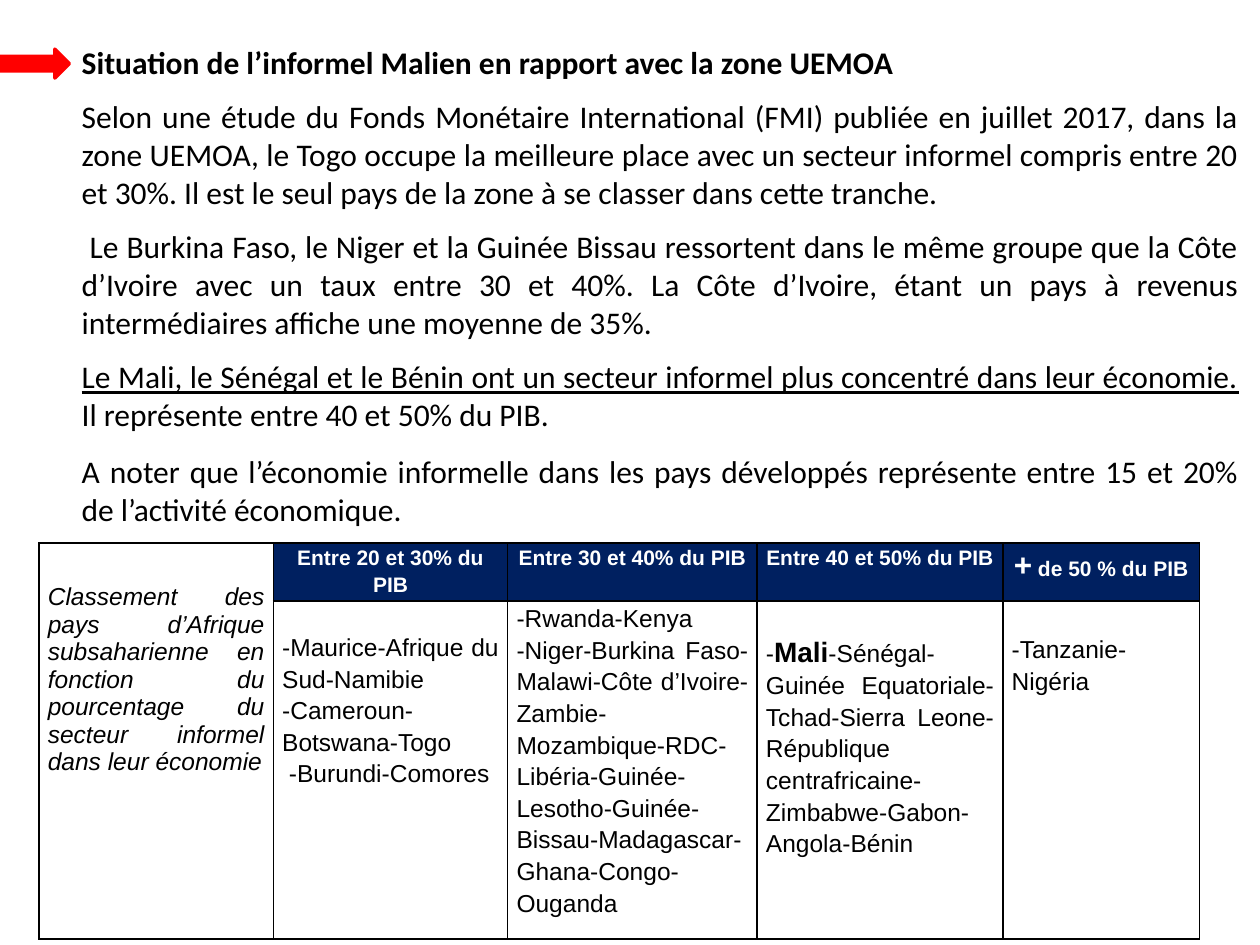
import pptx
import pptx.util
import pptx.dml.color
import pptx.enum.shapes
import pptx.enum.text
import pptx.oxml
import pptx.oxml.ns

Inches, Pt = pptx.util.Inches, pptx.util.Pt
ALIGN = pptx.enum.text.PP_ALIGN
COLORS = {"text": "000000", "header": "002060", "header_text": "FFFFFF", "arrow": "FF0000"}

# Content: (runs, space after in points); a run is (text, format)
PARAGRAPHS = [
    ([("Situation de l’informel Malien en rapport avec la zone UEMOA", {"bold": True})], 9.5),
    ([("Selon une étude du Fonds Monétaire International (FMI) publiée en juillet 2017, "
       "dans la zone UEMOA, le Togo occupe la meilleure place avec un secteur informel "
       "compris entre 20 et 30%. Il est le seul pays de la zone à se classer dans cette "
       "tranche.", {})], 9.5),
    ([(" Le Burkina Faso, le Niger et la Guinée Bissau ressortent dans le même groupe que "
       "la Côte d’Ivoire avec un taux entre 30 et 40%. La Côte d’Ivoire, étant un pays à "
       "revenus intermédiaires affiche une moyenne de 35%.", {})], 9.5),
    ([("Le Mali, le Sénégal et le Bénin ont un secteur informel plus concentré dans leur "
       "économie.", {"underline": True}),
      (" Il représente entre 40 et 50% du PIB.", {})], 11),
    ([("A noter que l’économie informelle dans les pays développés représente entre 15 et "
       "20% de l’activité économique.", {})], 0),
]
ROW_TITLE = ("Classement des pays d’Afrique subsaharienne en fonction du pourcentage du "
             "secteur informel dans leur économie")
# One entry per bracket: header runs, country runs, top margin of the country cell
BRACKETS = [
    ([("Entre 20 et 30% du PIB", {})],
     [("-Maurice-Afrique du Sud-Namibie\v-Cameroun-Botswana-Togo\v -Burundi-Comores", {})], 0.23),
    ([("Entre 30 et 40% du PIB", {})],
     [("-Rwanda-Kenya\v-Niger-Burkina Faso-Malawi-Côte d’Ivoire-Zambie-Mozambique-RDC-"
       "Libéria-Guinée-Lesotho-Guinée-Bissau-Madagascar-Ghana-Congo-Ouganda", {})], 0),
    ([("Entre 40 et 50% du PIB", {})],
     [("-", {}), ("Mali", {"size": 16, "bold": True}),
      ("-Sénégal-Guinée Equatoriale-Tchad-Sierra Leone-République centrafricaine-"
       "Zimbabwe-Gabon-Angola-Bénin", {})], 0.25),
    ([("+", {"size": 18}), (" de 50 % du PIB", {})],
     [("-Tanzanie-Nigéria", {})], 0.25),
]
COL_WIDTHS = [1.86, 1.86, 1.98, 1.95, 1.56]
ROW_HEIGHTS = [0.46, 2.68]


def rgb(name):
    return pptx.dml.color.RGBColor.from_string(COLORS[name])


def add_run(p, text, size=14, font="Arial", color="text", bold=False, italic=False,
            underline=False):
    for i, line in enumerate(text.split("\v")):
        if i:
            p.add_line_break()
        r = p.add_run()
        r.text = line
        f = r.font
        f.size, f.name, f.bold, f.italic, f.underline = Pt(size), font, bold, italic, underline
        f.color.rgb = rgb(color)


def fill_cell(cell, runs, align=ALIGN.JUSTIFY, top=0, spacing=1.15, fill=None, **base):
    cell.margin_left = cell.margin_right = Inches(0.07)
    cell.margin_top, cell.margin_bottom = Inches(top), 0
    p = cell.text_frame.paragraphs[0]
    p.alignment, p.line_spacing = align, spacing
    for text, fmt in runs:
        add_run(p, text, **{**base, **fmt})
    if fill:
        cell.fill.solid()
        cell.fill.fore_color.rgb = rgb(fill)
    else:
        cell.fill.background()


def add_borders(cell):
    tcPr = cell._tc.get_or_add_tcPr()
    for i, side in enumerate("LRTB"):
        tcPr.insert(i, pptx.oxml.parse_xml(
            f'<a:ln{side} {pptx.oxml.ns.nsdecls("a")} w="12700"><a:solidFill>'
            f'<a:srgbClr val="{COLORS["text"]}"/></a:solidFill></a:ln{side}>'))


prs = pptx.Presentation()
prs.slide_width, prs.slide_height = Inches(10), Inches(7.5)
s = prs.slides.add_slide(prs.slide_layouts[6])

# Body text
tf = s.shapes.add_textbox(Inches(0.55), Inches(0.23), Inches(9.38), Inches(4.07)).text_frame
tf.word_wrap = True
tf.vertical_anchor = pptx.enum.text.MSO_ANCHOR.MIDDLE
for i, (runs, after) in enumerate(PARAGRAPHS):
    p = tf.add_paragraph() if i else tf.paragraphs[0]
    p.alignment, p.space_after = ALIGN.JUSTIFY, Pt(after)
    for text, fmt in runs:
        add_run(p, text, size=18, font="Calibri", **fmt)

# Table of countries by bracket
table = s.shapes.add_table(2, len(COL_WIDTHS), Inches(0.31), Inches(4.31),
                           Inches(sum(COL_WIDTHS)), Inches(sum(ROW_HEIGHTS))).table
table.first_row = table.horz_banding = False
for col, width in zip(table.columns, COL_WIDTHS):
    col.width = Inches(width)
for row, height in zip(table.rows, ROW_HEIGHTS):
    row.height = Inches(height)
table.cell(0, 0).merge(table.cell(1, 0))
fill_cell(table.cell(0, 0), [(ROW_TITLE, {})], top=0.32, spacing=1.0, italic=True)
for c, (header, countries, top) in enumerate(BRACKETS, start=1):
    fill_cell(table.cell(0, c), header, align=ALIGN.CENTER, fill="header",
              size=12, color="header_text", bold=True)
    fill_cell(table.cell(1, c), countries, top=top)
for cell in table.iter_cells():
    add_borders(cell)

# Arrow pointing at the heading
sp = s.shapes.add_shape(pptx.enum.shapes.MSO_SHAPE.RIGHT_ARROW,
                        0, Inches(0.39), Inches(0.55), Inches(0.23))
sp.shadow.inherit = False
sp.fill.solid()
sp.fill.fore_color.rgb = rgb("arrow")
sp.line.color.rgb = rgb("arrow")
sp.line.width = Pt(2)

prs.save("out.pptx")
